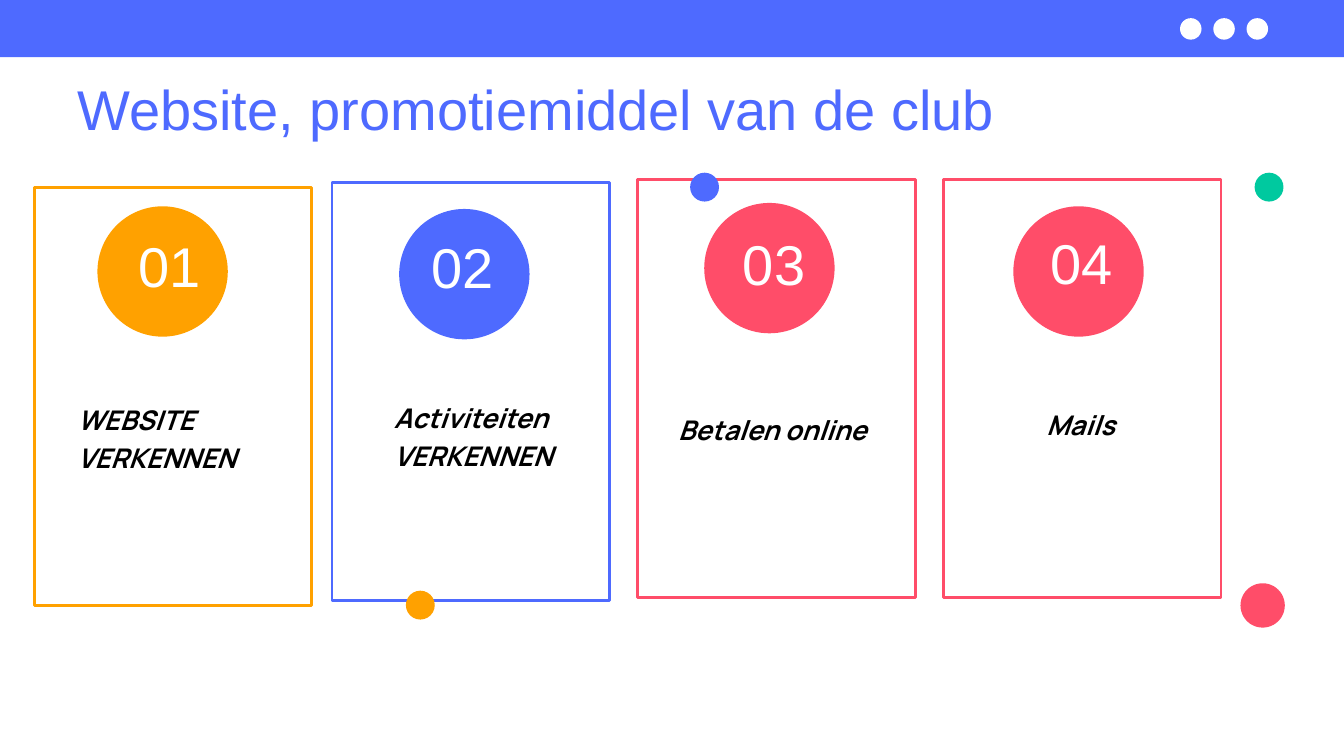
import pptx
import pptx.dml.color
import pptx.enum.shapes
import pptx.enum.text
import pptx.util
from pptx.util import Inches

SHAPE = pptx.enum.shapes.MSO_SHAPE
ALIGN = pptx.enum.text.PP_ALIGN
BLUE, ORANGE, RED, GREEN = "4E6AFF", "FFA100", "FF4D69", "00C99F"
WHITE, BLACK = "FFFFFF", "000000"
CARD_W, CARD_H, CIRCLE = 4.13, 6.22, 1.94


def rgb(value):
    """Turn a hex string into a colour."""
    return pptx.dml.color.RGBColor.from_string(value)


def add_shape(s, kind, x, y, w, h, fill, line=None):
    """Add a flat filled shape with an optional 3 pt outline."""
    sp = s.shapes.add_shape(kind, Inches(x), Inches(y), Inches(w), Inches(h))
    sp.shadow.inherit = False
    sp.fill.solid()
    sp.fill.fore_color.rgb = rgb(fill)
    if line:
        sp.line.color.rgb = rgb(line)
        sp.line.width = pptx.util.Pt(3)
    else:
        sp.line.fill.background()


def add_dot(s, x, y, size, fill):
    """Add a filled circle."""
    add_shape(s, SHAPE.OVAL, x, y, size, size, fill)


def add_text(s, x, y, w, h, lines, font, size, color, spacing, align=ALIGN.LEFT, strong=False):
    """Add a text box without insets, one paragraph per line."""
    tf = s.shapes.add_textbox(Inches(x), Inches(y), Inches(w), Inches(h)).text_frame
    tf.word_wrap = True
    tf.margin_left = tf.margin_right = tf.margin_top = tf.margin_bottom = 0
    for i, line in enumerate(lines):
        p = tf.add_paragraph() if i else tf.paragraphs[0]
        p.alignment = align
        p.line_spacing = pptx.util.Pt(spacing)
        r = p.add_run()
        r.text = line
        r.font.name = font
        r.font.size = pptx.util.Pt(size)
        r.font.bold = r.font.italic = strong
        r.font.color.rgb = rgb(color)


def add_header(s, x, y, w, h):
    """Draw the top band with its three window dots and the title below."""
    add_shape(s, SHAPE.RECTANGLE, x, y, w, h, BLUE)
    for i in range(3):
        add_dot(s, x + 17.56 + i * 0.495, y + 0.27, 0.32, WHITE)
    add_text(s, x + 1.15, y + 1.42, 17.19, 0.75, ["Website, promotiemiddel van de club"],
             "Arial", 60, BLUE, 49.2)


def add_card(s, x, y, color, number, circle, digits, label, label_size, lines, align=ALIGN.LEFT):
    """Draw a framed card; circle, digits and label are offsets from its corner."""
    add_shape(s, SHAPE.RECTANGLE, x, y, CARD_W, CARD_H, WHITE, color)
    add_dot(s, x + circle[0], y + circle[1], CIRCLE, color)
    add_text(s, x + digits[0], y + digits[1], 1.46, 0.71, [number],
             "Arial", 60, WHITE, 43.8, ALIGN.CENTER)
    add_text(s, x + label[0], y + label[1], *label_size, lines,
             "Manrope", 29, BLACK, 40.6, align, True)


def main():
    """Build and save the slide."""
    prs = pptx.Presentation()
    prs.slide_width, prs.slide_height = Inches(20), Inches(11.25)
    s = prs.slides.add_slide(prs.slide_layouts[6])
    add_header(s, 0, 0, 20, 0.85)
    cards = [
        (0.51, 2.79, ORANGE, "01", (0.94, 0.28), (1.29, 1.04), (0.64, 3.13), (3.29, 2.27),
         ["WEBSITE VERKENNEN"], ALIGN.JUSTIFY),
        (4.94, 2.72, BLUE, "02", (1, 0.39), (1.22, 1.13), (0.92, 3.18), (3.67, 3.08),
         ["Activiteiten", "VERKENNEN"]),
        (9.49, 2.67, RED, "03", (0.99, 0.35), (1.3, 1.13), (0.6, 3.4), (3.45, 1.7),
         ["Betalen online"]),
        (14.04, 2.67, RED, "04", (1.04, 0.4), (1.33, 1.12), (1.53, 3.33), (3.45, 1.7),
         ["Mails"]),
    ]
    for card in cards:
        add_card(s, *card)
    dots = [(18.67, 2.57, 0.43, GREEN), (18.46, 8.68, 0.66, RED),
            (10.27, 2.57, 0.43, BLUE), (6.04, 8.79, 0.43, ORANGE)]
    for dot in dots:
        add_dot(s, *dot)
    prs.save("out.pptx")


if __name__ == "__main__":
    main()
